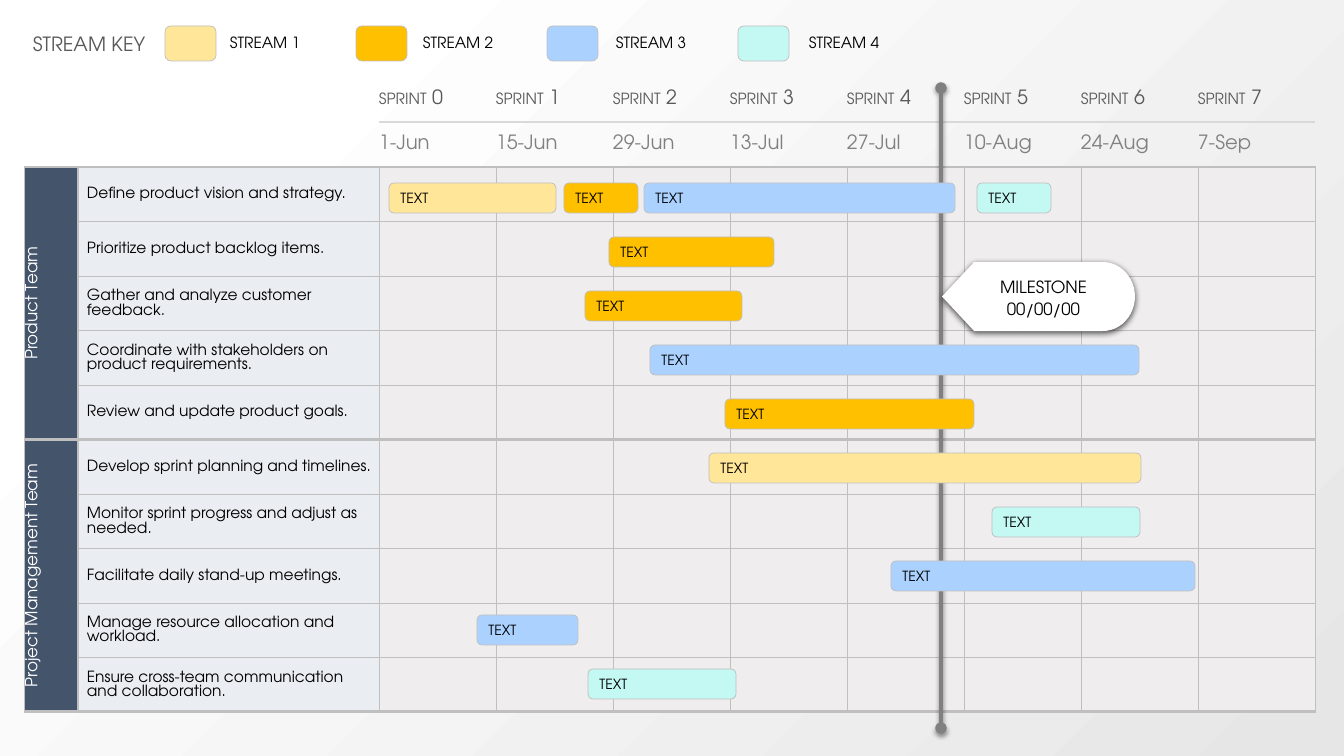
from lxml.etree import SubElement
from pptx import Presentation
from pptx.dml.color import RGBColor
from pptx.enum.shapes import MSO_CONNECTOR as Connector, MSO_SHAPE as Preset
from pptx.enum.text import MSO_ANCHOR as Anchor, MSO_AUTO_SIZE as AutoSize, PP_ALIGN as Align
from pptx.oxml.ns import qn
from pptx.util import Emu, Pt

EMU_PER_PX = 914400 / 100.8
FONT = "TeX Gyre Adventor"
NO_STYLE = "{2D5ABB26-0587-4C30-8999-92F81FD0307C}"
GREY, PALE_GREY, DARK_GREY = "BFBFBF", "D9D9D9", "595959"
STREAMS = ["FFE699", "FFC000", "ABD2FF", "C4F8F3"]
THIN, MEDIUM, THICK = (GREY, 0.5), (GREY, 1), (GREY, 2.25)

# Table geometry in px
LEFT, TOP, HEADER_HEIGHT, BODY_HEIGHT = 24, 77, 45, 545
TEAM_WIDTH, TASK_WIDTH, SPRINT_WIDTH = 54, 301, 117

DATES = ["1-Jun", "15-Jun", "29-Jun", "13-Jul", "27-Jul", "10-Aug", "24-Aug", "7-Sep"]
TEAMS = {
    "Product Team": [
        "Define product vision and strategy.",
        "Prioritize product backlog items.",
        "Gather and analyze customer feedback.",
        "Coordinate with stakeholders on product requirements.",
        "Review and update product goals.",
    ],
    "Project Management Team": [
        "Develop sprint planning and timelines.",
        "Monitor sprint progress and adjust as needed.",
        "Facilitate daily stand-up meetings.",
        "Manage resource allocation and workload.",
        "Ensure cross-team communication and collaboration.",
    ],
}
# Task row, stream number, left, width
BARS = [
    (0, 1, 389, 167), (0, 2, 564, 74), (0, 3, 644, 311), (0, 4, 977, 74),
    (1, 2, 609, 165), (2, 2, 585, 157), (3, 3, 650, 489), (4, 2, 725, 249),
    (5, 1, 709, 432), (6, 4, 992, 148), (7, 3, 891, 304), (8, 3, 477, 101),
    (9, 4, 588, 148),
]


def px(length):
    return Emu(round(length * EMU_PER_PX))


def color(hex_text):
    return RGBColor.from_string(hex_text)


def add_run(para, text, size, hex_text):
    run = para.add_run()
    run.text = text
    run.font.name, run.font.size = FONT, Pt(size)
    run.font.color.rgb = color(hex_text)


def set_margins(frame, left=0, top=0, right=0, bottom=0):
    frame.margin_left, frame.margin_top = px(left), px(top)
    frame.margin_right, frame.margin_bottom = px(right), px(bottom)


def add_shadow(element, blur, distance, opacity):
    properties = element.spPr
    for old in properties.findall(qn("a:effectLst")):
        properties.remove(old)
    effects = SubElement(properties, qn("a:effectLst"))
    shadow = SubElement(effects, qn("a:outerShdw"), blurRad=str(Pt(blur)),
                        dist=str(Pt(distance)), dir="5400000", algn="t", rotWithShape="0")
    black = SubElement(shadow, qn("a:srgbClr"), val="000000")
    SubElement(black, qn("a:alpha"), val=str(opacity * 1000))


def add_block(shapes, preset, left, top, width, height, fill, outlined=True):
    box = shapes.add_shape(preset, px(left), px(top), px(width), px(height))
    box.shadow.inherit = False
    box.fill.solid()
    box.fill.fore_color.rgb = color(fill)
    if outlined:
        box.line.color.rgb = color(GREY)
        box.line.width = Pt(0.5)
    else:
        box.line.fill.background()
    box.text_frame.vertical_anchor = Anchor.MIDDLE
    set_margins(box.text_frame, left=10)
    return box


def add_label(shapes, text, left, top, width, height, size, hex_text):
    box = shapes.add_textbox(px(left), px(top), px(width), px(height))
    box.text_frame.word_wrap = False
    box.text_frame.auto_size = AutoSize.SHAPE_TO_FIT_TEXT
    add_run(box.text_frame.paragraphs[0], text, size, hex_text)


def style_cell(cell, borders, fill=None):
    """Borders are keyed L, R, T, B; a missing side is drawn without a line."""
    properties = cell._tc.get_or_add_tcPr()
    for side in "LRTB":
        line = SubElement(properties, qn("a:ln" + side))
        if side in borders:
            hex_text, width = borders[side]
            line.set("w", str(Pt(width)))
            SubElement(SubElement(line, qn("a:solidFill")), qn("a:srgbClr"), val=hex_text)
        else:
            SubElement(line, qn("a:noFill"))
    if fill:
        cell.fill.solid()
        cell.fill.fore_color.rgb = color(fill)
    else:
        cell.fill.background()
    cell.vertical_anchor = Anchor.MIDDLE
    set_margins(cell)


def fill_header(table):
    rule = (PALE_GREY, 1)
    for column in range(2):
        style_cell(table.cell(0, column), {})
        style_cell(table.cell(1, column), {"B": THICK})
    for number, date in enumerate(DATES):
        sprint_cell, date_cell = table.cell(0, number + 2), table.cell(1, number + 2)
        style_cell(sprint_cell, {"B": rule})
        para = sprint_cell.text_frame.paragraphs[0]
        add_run(para, "SPRINT", 11, DARK_GREY)
        add_run(para, f" {number}", 14, DARK_GREY)
        style_cell(date_cell, {"T": rule, "B": THICK})
        add_run(date_cell.text_frame.paragraphs[0], date, 14, "808080")


def fill_team(table, first_row, team, tasks):
    last_row = first_row + len(tasks) - 1
    for row, task in enumerate(tasks, first_row):
        edges = {"T": THICK if row == first_row else THIN,
                 "B": THICK if row == last_row else THIN}
        style_cell(table.cell(row, 0), {"L": THIN, "R": MEDIUM, "T": THICK, "B": THICK}, "44546A")
        task_cell = table.cell(row, 1)
        style_cell(task_cell, {"L": MEDIUM, "R": THIN, **edges}, "EAEEF3")
        set_margins(task_cell, left=9, top=1, right=1)
        add_run(task_cell.text_frame.paragraphs[0], task, 11, "000000")
        for column in range(2, len(DATES) + 2):
            style_cell(table.cell(row, column), {"L": THIN, "R": THIN, **edges}, "EFEDED")

    team_cell = table.cell(first_row, 0)
    team_cell.merge(table.cell(last_row, 0))
    set_margins(team_cell, left=1, top=1, right=1)
    team_cell._tc.get_or_add_tcPr().set("vert", "vert270")
    para = team_cell.text_frame.paragraphs[0]
    para.alignment = Align.CENTER
    add_run(para, team, 12, "FFFFFF")


def add_schedule(page):
    task_count = sum(map(len, TEAMS.values()))
    widths = [TEAM_WIDTH, TASK_WIDTH] + [SPRINT_WIDTH] * len(DATES)
    heights = [HEADER_HEIGHT] * 2 + [BODY_HEIGHT / task_count] * task_count
    frame = page.shapes.add_table(len(heights), len(widths), px(LEFT), px(TOP),
                                  px(sum(widths)), px(sum(heights)))
    table = frame.table
    table.first_row = table.horz_banding = False
    table._tbl.tblPr.find(qn("a:tableStyleId")).text = NO_STYLE
    for column, width in zip(table.columns, widths):
        column.width = px(width)
    for row, height in zip(table.rows, heights):
        row.height = px(height)
    fill_header(table)
    first_row = 2
    for team, tasks in TEAMS.items():
        fill_team(table, first_row, team, tasks)
        first_row += len(tasks)


def add_milestone(page):
    shapes = page.shapes.add_group_shape().shapes
    marker = shapes.add_connector(Connector.STRAIGHT, px(941), px(88), px(941), px(728))
    marker.line.color.rgb = color("808080")
    marker.line.width = Pt(2.75)
    for end in ("headEnd", "tailEnd"):
        SubElement(marker.line._get_or_add_ln(), qn("a:" + end), type="oval")
    add_shadow(marker._element, 3.1, 1.6, 38)

    flag = add_block(shapes, Preset.FLOWCHART_DISPLAY, 942, 262, 193, 69, "FFFFFF", outlined=False)
    add_shadow(flag._element, 4.5, 1.5, 63)
    frame = flag.text_frame
    for para, text in ((frame.paragraphs[0], "MILESTONE"), (frame.add_paragraph(), "00/00/00")):
        para.alignment = Align.CENTER
        para.line_spacing = 1.1
        add_run(para, text, 12, "000000")


def add_bar(page, row, stream, left, width):
    bar = add_block(page.shapes, Preset.ROUNDED_RECTANGLE, left, 183 + 54 * row, width, 30,
                    STREAMS[stream - 1])
    para = bar.text_frame.paragraphs[0]
    para.alignment = Align.LEFT
    add_run(para, "TEXT", 10, "000000")


def add_stream_key(page):
    add_label(page.shapes, "STREAM KEY", 23, 27, 134, 34, 14, DARK_GREY)
    shapes = page.shapes.add_group_shape().shapes
    for index, fill in enumerate(STREAMS):
        add_block(shapes, Preset.ROUNDED_RECTANGLE, 165 + 191 * index, 26, 51, 35, fill)
        add_label(shapes, f"STREAM {index + 1}", 220 + 193 * index, 28, 93, 29, 11, "000000")


def set_background(page):
    fill = page.background.fill
    fill.gradient()
    fill.gradient_angle = 135
    for stop, position, hex_text in zip(fill.gradient_stops, (0, 0.83), ("E7E6E6", "FFFFFF")):
        stop.position, stop.color.rgb = position, color(hex_text)


def main():
    deck = Presentation()
    deck.slide_width, deck.slide_height = px(1344), px(756)
    page = deck.slides.add_slide(deck.slide_layouts[6])
    set_background(page)
    add_schedule(page)
    add_milestone(page)
    for bar in BARS:
        add_bar(page, *bar)
    add_stream_key(page)
    deck.save("out.pptx")


if __name__ == "__main__":
    main()
